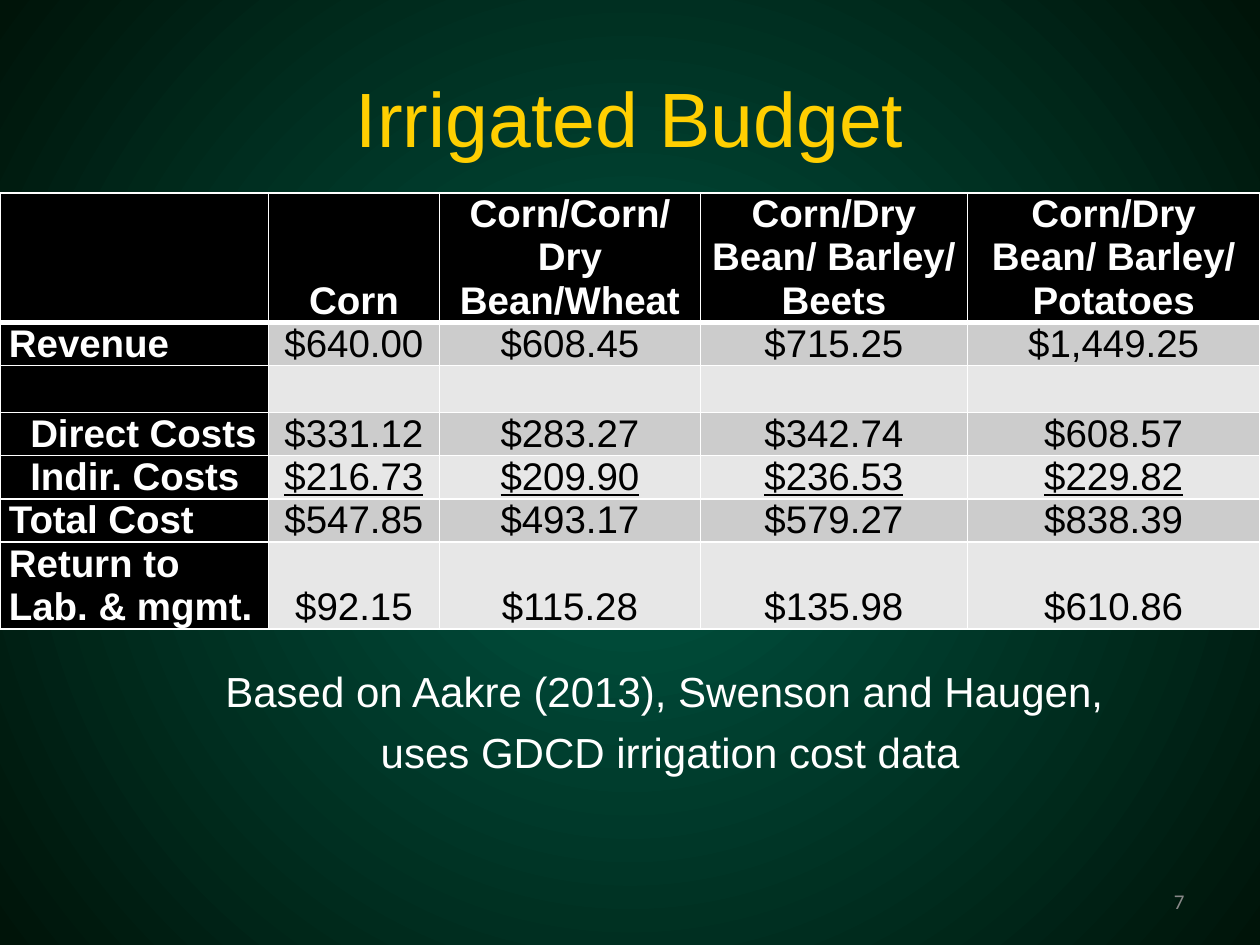
import dataclasses
import typing

import pptx
import pptx.dml.color
import pptx.enum.text
import pptx.oxml
import pptx.oxml.ns
import pptx.util

Cm = pptx.util.Cm
Pt = pptx.util.Pt
Rgb = pptx.dml.color.RGBColor.from_string
Align = pptx.enum.text.PP_ALIGN
Anchor = pptx.enum.text.MSO_ANCHOR
qn = pptx.oxml.ns.qn
NS = pptx.oxml.ns.nsdecls("a")


@dataclasses.dataclass(frozen=True)
class Theme:
    core: str = "005643"
    edge: str = "001409"
    gold: str = "FFCF01"
    white: str = "FFFFFF"
    black: str = "000000"
    dark: str = "CCCCCC"
    light: str = "E7E7E7"
    gray: str = "898989"
    title: int = 44
    note: int = 24
    cell: int = 22
    small: int = 12
    face: str = "Arial"
    alt: str = "Calibri"


@dataclasses.dataclass(frozen=True)
class Row:
    label: str
    values: tuple[str, ...]
    height: float
    indent: float = 0
    under: bool = False


THEME = Theme()
WIDTHS = (5.41, 3.45, 5.26, 5.38, 5.9)
ROWS = (
    Row("", ("Corn", "Corn/Corn/\nDry Bean/Wheat", "Corn/Dry Bean/ Barley/ Beets",
             "Corn/Dry Bean/ Barley/ Potatoes"), 2.59),
    Row("Revenue", ("$640.00", "$608.45", "$715.25", "$1,449.25"), 0.87),
    Row("", ("", "", "", ""), 0.95),
    Row("Direct Costs", ("$331.12", "$283.27", "$342.74", "$608.57"), 0.87, 0.43),
    Row("Indir. Costs", ("$216.73", "$209.90", "$236.53", "$229.82"), 0.87, 0.43, True),
    Row("Total Cost", ("$547.85", "$493.17", "$579.27", "$838.39"), 0.87),
    Row("Return to Lab. & mgmt.", ("$92.15", "$115.28", "$135.98", "$610.86"), 1.75),
)


def apply(item: typing.Any, form: dict[str, typing.Any]) -> None:
    for name, value in form.items():
        setattr(item, name, value)


def place(shape: typing.Any, left: float, top: float, width: float, height: float) -> None:
    apply(shape, {"left": Cm(left), "top": Cm(top), "width": Cm(width), "height": Cm(height)})


def write(frame: typing.Any, text: str, size: int, color: str, align: Align,
          face: str = THEME.face, **extra: typing.Any) -> None:
    frame.text = text
    for para in frame.paragraphs:
        para.alignment = align
        for run in para.runs:
            apply(run.font, {"name": face, "size": Pt(size), **extra})
            run.font.color.rgb = Rgb(color)


def rule(cell: typing.Any, top: int, bottom: int) -> None:
    props = cell._tc.get_or_add_tcPr()
    for side, width in {"L": 1, "R": 1, "T": top, "B": bottom}.items():
        props.append(pptx.oxml.parse_xml(
            f'<a:ln{side} {NS} w="{Pt(width)}"><a:solidFill>'
            f'<a:srgbClr val="{THEME.white}"/></a:solidFill></a:ln{side}>'))


def paint(slide: typing.Any) -> None:
    fill = slide.background.fill
    fill.gradient()
    looks = ((0.02, THEME.core), (1, THEME.edge))
    for stop, (place_at, color) in zip(fill.gradient_stops, looks):
        stop.position = place_at
        stop.color.rgb = Rgb(color)
    grad = slide._element.find(".//" + qn("a:gradFill"))
    grad.replace(grad.find(qn("a:lin")), pptx.oxml.parse_xml(
        f'<a:path {NS} path="circle">'
        '<a:fillToRect l="50000" t="50000" r="50000" b="50000"/></a:path>'))


def draw_cell(cell: typing.Any, row: Row, y: int, x: int, text: str) -> None:
    head = y == 0 or x == 0
    rule(cell, 3 if y == 1 else 1, 3 if y == 0 else 1)
    cell.fill.solid()
    cell.fill.fore_color.rgb = Rgb(
        THEME.black if head else THEME.dark if y % 2 else THEME.light)
    apply(cell, {
        "vertical_anchor": Anchor.BOTTOM,
        "margin_left": Cm(0.18 + (0 if x else row.indent)),
        "margin_right": Cm(0.18), "margin_top": 0, "margin_bottom": 0,
    })
    write(cell.text_frame, text, THEME.cell, THEME.white if head else THEME.black,
          Align.CENTER if x else Align.LEFT, bold=head, underline=row.under and x > 0)


def draw_table(slide: typing.Any) -> None:
    table = slide.shapes.add_table(
        len(ROWS), len(WIDTHS), Cm(0), Cm(3.89), Cm(sum(WIDTHS)),
        Cm(sum(row.height for row in ROWS))).table
    table.first_col = True
    for col, width in zip(table.columns, WIDTHS):
        col.width = Cm(width)
    for y, row in enumerate(ROWS):
        table.rows[y].height = Cm(row.height)
        for x, text in enumerate((row.label, *row.values)):
            draw_cell(table.cell(y, x), row, y, x, text)


def draw_note(body: typing.Any) -> None:
    place(body, 1.93, 13.28, 23.16, 3.18)
    frame = body.text_frame
    write(frame, "Based on Aakre (2013), Swenson and Haugen, \nuses GDCD irrigation cost data",
          THEME.note, THEME.white, Align.CENTER)
    frame.auto_size = pptx.enum.text.MSO_AUTO_SIZE.NONE
    for rank, para in enumerate(frame.paragraphs):
        para.space_before = Pt(6 * rank)
        props = para._p.get_or_add_pPr()
        props.set("marL", "0")
        props.set("indent", "0")
        props.append(pptx.oxml.parse_xml(f"<a:buNone {NS}/>"))


def main() -> None:
    deck = pptx.Presentation()
    apply(deck, {"slide_width": Cm(25.4), "slide_height": Cm(19.05)})
    slide = deck.slides.add_slide(deck.slide_layouts[1])
    paint(slide)
    title = slide.shapes.title
    place(title, 1.27, 0.76, 22.86, 3.18)
    write(title.text_frame, "Irrigated Budget", THEME.title, THEME.gold, Align.CENTER)
    draw_table(slide)
    page = slide.shapes.add_textbox(Cm(18.21), Cm(17.65), Cm(5.92), Cm(1.02)).text_frame
    apply(page, {"word_wrap": True, "vertical_anchor": Anchor.MIDDLE})
    write(page, "7", THEME.small, THEME.gray, Align.RIGHT, THEME.alt)
    draw_note(slide.placeholders[1])
    deck.save("out.pptx")


if __name__ == "__main__":
    main()
